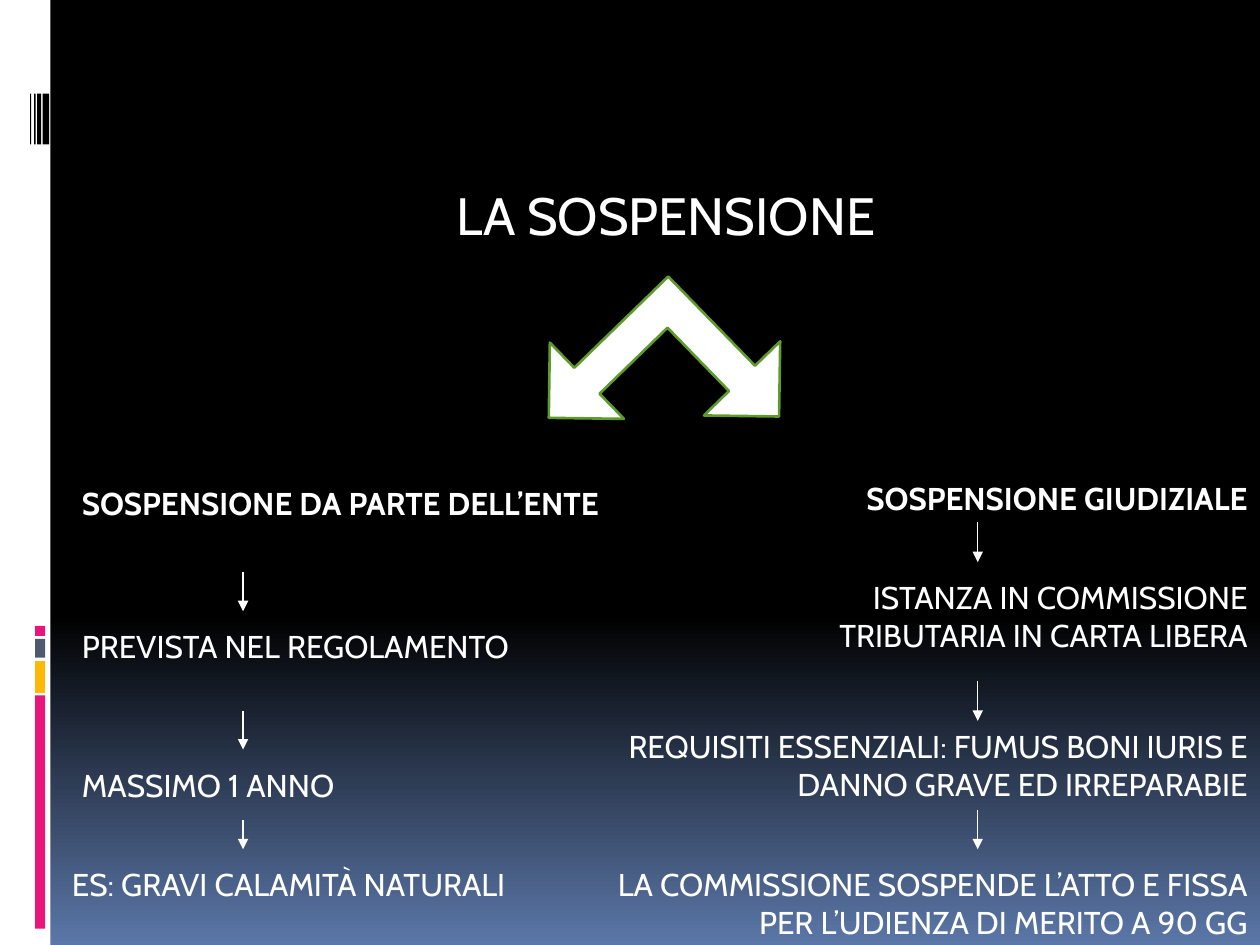
from lxml.etree import SubElement
from pptx import Presentation
from pptx.dml.color import RGBColor
from pptx.enum.shapes import MSO_CONNECTOR as Connector, MSO_SHAPE as Shape
from pptx.enum.text import MSO_ANCHOR as Anchor, MSO_AUTO_SIZE as AutoSize, PP_ALIGN as Align
from pptx.oxml.ns import qn
from pptx.util import Cm, Pt

WHITE = RGBColor(0xFF, 0xFF, 0xFF)
BLACK = RGBColor(0x00, 0x00, 0x00)
BLUE = RGBColor(0x5B, 0x77, 0xA8)
PINK = RGBColor(0xEA, 0x15, 0x7A)
YELLOW = RGBColor(0xFE, 0xB8, 0x0A)
SLATE = RGBColor(0x4E, 0x5B, 0x6F)
GREEN = RGBColor(0x5E, 0x9B, 0x2C)

WIDTH, HEIGHT = 25.4, 19.05
ONE_LINE, TWO_LINES = 1.02, 1.78

# Side strip: left, top, width, height, colour
STRIP = [
    (0, 0, 1.02, HEIGHT, WHITE),
    (0.71, 14.02, 0.2, 4.7, PINK),
    (0.71, 13.33, 0.2, 0.64, YELLOW),
    (0.71, 12.88, 0.2, 0.38, SLATE),
    (0.71, 12.62, 0.2, 0.2, PINK),
    (0.86, 1.89, 0.13, 1.02, BLACK),
    (0.75, 1.89, 0.08, 1.02, BLACK),
    (0.69, 1.89, 0.03, 1.02, BLACK),
    (0.61, 1.89, 0.02, 1.02, BLACK),
]

# Steps: text, left, top, width, height
ENTITY_STEPS = [
    ("SOSPENSIONE DA PARTE DELL’ENTE", 1.4, 9.63, 12.32, ONE_LINE),
    ("PREVISTA NEL REGOLAMENTO", 1.4, 12.52, 9.3, ONE_LINE),
    ("MASSIMO 1 ANNO", 1.4, 15.32, 8.5, ONE_LINE),
    ("ES: GRAVI CALAMITÀ NATURALI", 1.2, 17.32, 10.1, ONE_LINE),
]
COURT_STEPS = [
    ("SOSPENSIONE GIUDIZIALE", 14.5, 9.53, 10.9, ONE_LINE),
    ("ISTANZA IN COMMISSIONE TRIBUTARIA IN CARTA LIBERA", 14.5, 11.53, 10.9, TWO_LINES),
    ("REQUISITI ESSENZIALI: FUMUS BONI IURIS E DANNO GRAVE ED IRREPARABIE",
     10.9, 14.53, 14.5, TWO_LINES),
    ("LA COMMISSIONE SOSPENDE L’ATTO E FISSA PER L’UDIENZA DI MERITO A 90 GG",
     11.1, 17.32, 14.3, TWO_LINES),
]
# Arrows between steps: top, bottom
ENTITY_ARROWS = [(11.53, 12.32), (14.33, 15.11), (16.54, 17.12)]
COURT_ARROWS = [(10.52, 11.33), (13.72, 14.53), (16.33, 17.12)]


class SlideBuilder:
    font_name = "Cabin"
    heading_size = 30
    text_size = 18

    def __init__(self, slide):
        self.slide = slide

    def background(self):
        fill = self.slide.background.fill
        fill.gradient()
        fill.gradient_angle = 270
        for stop, position, color in zip(fill.gradient_stops, (0.65, 1), (BLACK, BLUE)):
            stop.position = position
            stop.color.rgb = color

    def styled_run(self, paragraph, text, size, align, bold=False):
        paragraph.alignment = align
        run = paragraph.add_run()
        run.text = text
        run.font.name = self.font_name
        run.font.size = Pt(size)
        run.font.bold = bold
        run.font.color.rgb = WHITE

    def heading(self, text, left, top, width, height):
        """Put the heading in the body placeholder, without a bullet."""
        body = self.slide.placeholders[1]
        body.left, body.top, body.width, body.height = map(Cm, (left, top, width, height))
        frame = body.text_frame
        frame.auto_size = AutoSize.NONE
        frame.vertical_anchor = Anchor.TOP
        frame.margin_top = Cm(1.7)
        frame.margin_left = Cm(0.43)
        paragraph = frame.paragraphs[0]
        self.styled_run(paragraph, text, self.heading_size, Align.CENTER)
        paragraph.space_before = Pt(0)
        properties = paragraph._p.get_or_add_pPr()
        properties.set("marL", "0")
        properties.set("indent", "0")
        SubElement(properties, qn("a:buNone"))

    def text(self, text, left, top, width, height, align, bold):
        box = self.slide.shapes.add_textbox(*map(Cm, (left, top, width, height)))
        frame = box.text_frame
        frame.word_wrap = True
        self.styled_run(frame.paragraphs[0], text, self.text_size, align, bold)

    def shape(self, kind, left, top, width, height, color):
        shape = self.slide.shapes.add_shape(kind, *map(Cm, (left, top, width, height)))
        shape.shadow.inherit = False
        shape.fill.solid()
        shape.fill.fore_color.rgb = color
        shape.line.fill.background()
        return shape

    def fork(self, left, top, width, height):
        """Two-headed arrow that points to both columns."""
        fork = self.shape(Shape.LEFT_UP_ARROW, left, top, width, height, WHITE)
        fork.rotation = 225.8
        for index, value in enumerate((0.17, 0.25, 0.25)):
            fork.adjustments[index] = value
        fork.line.color.rgb = GREEN
        fork.line.width = Pt(1.5)

    def down_arrow(self, x, top, bottom):
        arrow = self.slide.shapes.add_connector(
            Connector.STRAIGHT, Cm(x), Cm(top), Cm(x), Cm(bottom))
        arrow.line.color.rgb = WHITE
        arrow.line.width = Pt(0.75)
        properties = arrow._element.spPr
        SubElement(properties.find(qn("a:ln")), qn("a:tailEnd"), type="triangle")
        SubElement(properties, qn("a:effectLst"))

    def column(self, steps, arrows, arrow_x, align):
        for index, (text, *place) in enumerate(steps):
            self.text(text, *place, align, bold=index == 0)
        for top, bottom in arrows:
            self.down_arrow(arrow_x, top, bottom)


def main():
    presentation = Presentation()
    presentation.slide_width, presentation.slide_height = Cm(WIDTH), Cm(HEIGHT)
    slide = presentation.slides.add_slide(presentation.slide_layouts[1])
    title = slide.shapes.title._element
    title.getparent().remove(title)

    builder = SlideBuilder(slide)
    builder.background()
    for *place, color in STRIP:
        builder.shape(Shape.RECTANGLE, *place, color)
    builder.heading("LA SOSPENSIONE", 2.54, 1.98, 21.6, 15.67)
    builder.column(ENTITY_STEPS, ENTITY_ARROWS, 4.9, Align.LEFT)
    builder.column(COURT_STEPS, COURT_ARROWS, 19.71, Align.RIGHT)
    builder.fork(11.25, 5.44, 4.29, 4.42)
    presentation.save("out.pptx")


if __name__ == "__main__":
    main()
